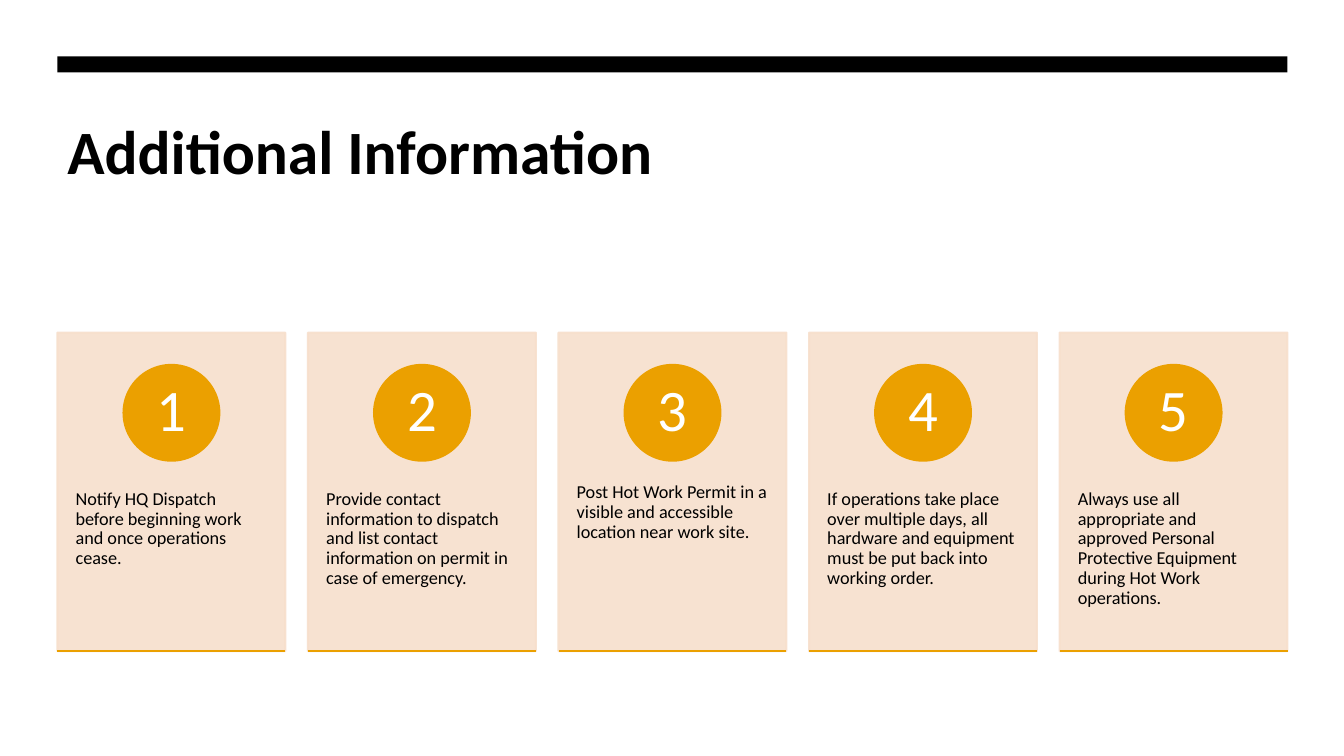
import dataclasses

import pptx
import pptx.dml.color
import pptx.enum.shapes
import pptx.enum.text
import pptx.oxml.ns
import pptx.util
from lxml import etree

PX = 9144
ALIGN = pptx.enum.text.PP_ALIGN
ANCHOR = pptx.enum.text.MSO_ANCHOR
SHAPE = pptx.enum.shapes.MSO_SHAPE


@dataclasses.dataclass(frozen=True)
class Theme:
    """Colours, font and type sizes of the slide."""
    font: str = "Calibri"
    ink: str = "000000"
    card: str = "F7DFCC"
    accent: str = "EBA000"
    on_accent: str = "FFFFFF"
    title_size: int = 44
    number_size: int = 42
    body_size: int = 13
    line_width: float = 1.5
    card_opacity: int = 90


THEME = Theme()
STEPS = [
    "Notify HQ Dispatch before beginning work and once operations cease.",
    "Provide contact information to dispatch and list contact information on permit in case of emergency.",
    "Post Hot Work Permit in a visible and accessible location near work site.",
    "If operations take place over multiple days, all hardware and equipment must be put back into working order.",
    "Always use all appropriate and approved Personal Protective Equipment during Hot Work operations.",
]


def emu(*lengths):
    """Turn px lengths into EMU."""
    return [round(length * PX) for length in lengths]


def rgb(colour):
    """Return the colour object for a hex string."""
    return pptx.dml.color.RGBColor.from_string(colour)


def add_block(slide, kind, box, colour, opacity=100):
    """Draw a preset shape whose fill and outline share one colour."""
    block = slide.shapes.add_shape(kind, *emu(*box))
    block.shadow.inherit = False
    block.fill.solid()
    block.line.width = pptx.util.Pt(THEME.line_width)
    for paint in (block.fill, block.line.fill):
        paint.solid()
        paint.fore_color.rgb = rgb(colour)
    if opacity < 100:
        for tone in block._element.spPr.iter(pptx.oxml.ns.qn("a:srgbClr")):
            etree.SubElement(tone, pptx.oxml.ns.qn("a:alpha"), val=str(opacity * 1000))
    return block


def write(holder, wording, size, colour, insets, bold=False, align=ALIGN.LEFT,
          anchor=ANCHOR.TOP, spacing=1.0):
    """Set one paragraph of text in a shape or text box."""
    frame = holder.text_frame
    frame.word_wrap = True
    frame.vertical_anchor = anchor
    frame.margin_left, frame.margin_top = emu(*insets)
    frame.margin_right, frame.margin_bottom = emu(*insets)
    paragraph = frame.paragraphs[0]
    paragraph.text = wording
    paragraph.alignment = align
    paragraph.line_spacing = spacing
    paragraph.font.name = THEME.font
    paragraph.font.size = pptx.util.Pt(size)
    paragraph.font.bold = bold
    paragraph.font.color.rgb = rgb(colour)


def add_header(slide, left, top, width):
    """Place the black band and the title below it."""
    band = add_block(slide, SHAPE.RECTANGLE, (left, top, width, 16), THEME.ink)
    band.line.fill.background()
    title = slide.shapes.add_textbox(*emu(left, top + 51, width, 160))
    write(title, "Additional Information", THEME.title_size, THEME.ink, (10, 5), bold=True)


def add_step(slide, left, top, width, height, number, instruction):
    """Place one card with its numbered circle, instruction and base line."""
    add_block(slide, SHAPE.RECTANGLE, (left, top, width, height), THEME.card, THEME.card_opacity)
    body = slide.shapes.add_textbox(*emu(left, top + 120, width, 190))
    write(body, instruction, THEME.body_size, THEME.ink, (18, 36), spacing=0.9)
    diameter = 95
    circle = add_block(slide, SHAPE.OVAL,
                       (left + (width - diameter) / 2, top + 32, diameter, diameter), THEME.accent)
    write(circle, str(number), THEME.number_size, THEME.on_accent, (7, 1),
          align=ALIGN.CENTER, anchor=ANCHOR.MIDDLE, spacing=0.9)
    base = slide.shapes.add_connector(pptx.enum.shapes.MSO_CONNECTOR.STRAIGHT,
                                      *emu(left, top + height, left + width, top + height))
    base.line.color.rgb = rgb(THEME.accent)
    base.line.width = pptx.util.Pt(THEME.line_width)
    etree.SubElement(base._element.spPr, pptx.oxml.ns.qn("a:effectLst"))


def add_steps(slide, left, top, width, height):
    """Spread the step cards evenly over the given box."""
    card_width = 226
    pitch = (width - card_width) / (len(STEPS) - 1)
    for index, instruction in enumerate(STEPS):
        add_step(slide, left + index * pitch, top, card_width, height, index + 1, instruction)


def main():
    """Build and save the slide."""
    deck = pptx.Presentation()
    deck.slide_width, deck.slide_height = emu(1333, 750)
    slide = deck.slides.add_slide(deck.slide_layouts[6])
    add_header(slide, 57, 56, 1220)
    add_steps(slide, 57, 330, 1220, 316)
    deck.save("out.pptx")


if __name__ == "__main__":
    main()
